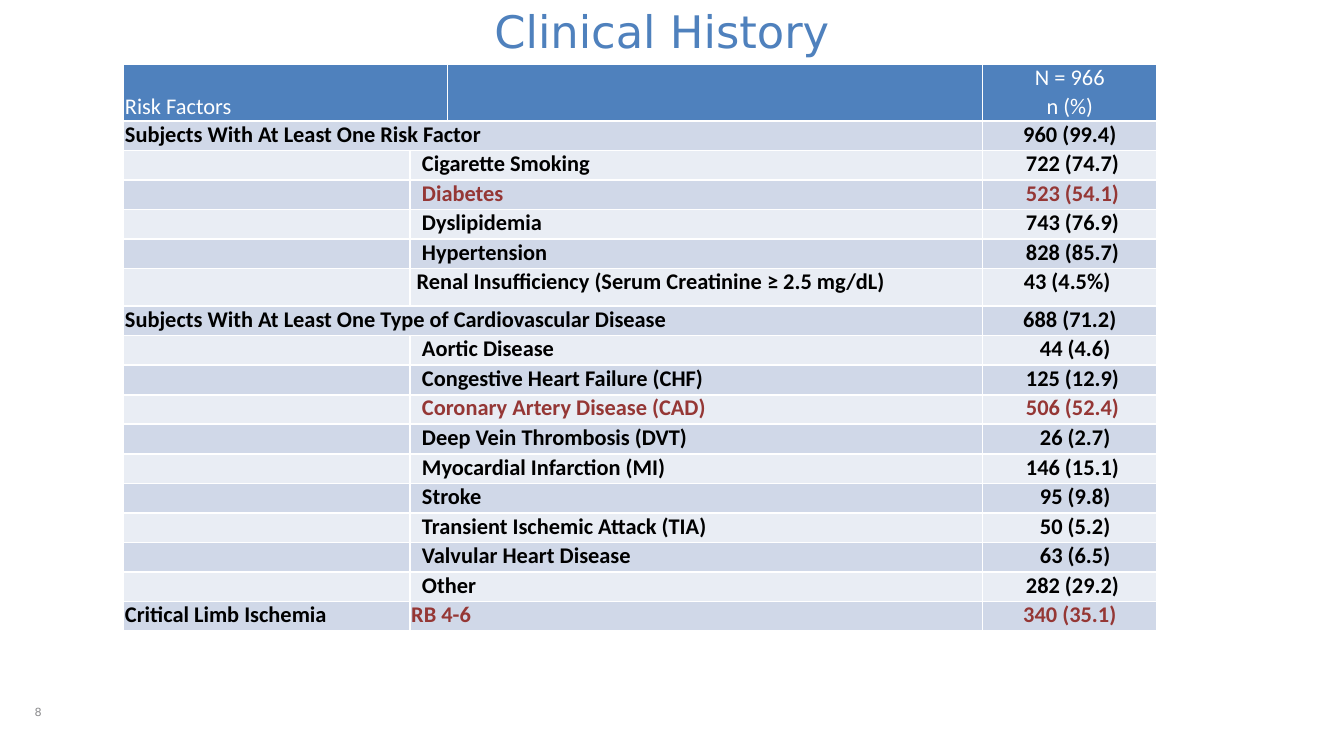
from collections import namedtuple

from lxml import etree
from pptx import Presentation
from pptx.dml.color import RGBColor
from pptx.enum.text import MSO_ANCHOR, PP_ALIGN
from pptx.oxml.ns import qn
from pptx.util import Inches, Pt

Theme = namedtuple("Theme", "blue white black red gray bands body title number table_font slide_font")
theme = Theme("4F81BD", "FFFFFF", "000000", "953735", "8C8C8E", ("D0D8E8", "E9EDF4"),
              12, 24, 6, "Calibri", "DejaVu Sans")


def write(paragraph, text, **font_values):
    color = font_values.pop("color")
    run = paragraph.add_run()
    run.text = text
    for name, value in font_values.items():
        setattr(run.font, name, value)
    run.font.color.rgb = RGBColor.from_string(color)


def add_border(cell, side):
    line = etree.SubElement(cell._tc.get_or_add_tcPr(), qn(f"a:ln{side}"), w=str(Pt(1)))
    fill = etree.SubElement(line, qn("a:solidFill"))
    etree.SubElement(fill, qn("a:srgbClr"), val=theme.white)


deck = Presentation()
deck.slide_width = Inches(10)
deck.slide_height = Inches(10) * 9 // 16
slide = deck.slides.add_slide(deck.slide_layouts[6])

captions = [
    ("Clinical History", (3.58, 0, 2.83, 0.48), theme.title, theme.blue, MSO_ANCHOR.BOTTOM, PP_ALIGN.LEFT),
    ("8", (0, 5.05, 0.57, 0.49), theme.number, theme.gray, MSO_ANCHOR.MIDDLE, PP_ALIGN.CENTER),
]
for text, bounds, size, color, anchor, alignment in captions:
    caption = slide.shapes.add_textbox(*map(Inches, bounds)).text_frame
    caption.word_wrap = True
    caption.vertical_anchor = anchor
    caption.paragraphs[0].alignment = alignment
    write(caption.paragraphs[0], text, size=Pt(size), name=theme.slide_font, color=color)

history = [
    ("Subjects With At Least One Risk Factor", "", "960 (99.4)"),
    ("", "Cigarette Smoking", "722 (74.7)"),
    ("", "Diabetes", "523 (54.1)"),
    ("", "Dyslipidemia", "743 (76.9)"),
    ("", "Hypertension", "828 (85.7)"),
    ("", "Renal Insufficiency (Serum Creatinine ≥ 2.5 mg/dL)", "43 (4.5%)"),
    ("Subjects With At Least One Type of Cardiovascular Disease", "", "688 (71.2)"),
    ("", "Aortic Disease", "44 (4.6)"),
    ("", "Congestive Heart Failure (CHF)", "125 (12.9)"),
    ("", "Coronary Artery Disease (CAD)", "506 (52.4)"),
    ("", "Deep Vein Thrombosis (DVT)", "26 (2.7)"),
    ("", "Myocardial Infarction (MI)", "146 (15.1)"),
    ("", "Stroke", "95 (9.8)"),
    ("", "Transient Ischemic Attack (TIA)", "50 (5.2)"),
    ("", "Valvular Heart Disease", "63 (6.5)"),
    ("", "Other", "282 (29.2)"),
    ("Critical Limb Ischemia", "RB 4-6", "340 (35.1)"),
]
rows = [("Risk Factors", "", "N = 966\nn (%)")] + history
highlighted = {"Diabetes", "Coronary Artery Disease (CAD)", "RB 4-6"}
renal_row = 6

table = slide.shapes.add_table(len(rows), 4, Inches(0.92), Inches(0.48), Inches(7.69), Inches(4.22)).table
for column, width in zip(table.columns, (2.13, 0.28, 3.98, 1.3)):
    column.width = Inches(width)

cell_format = {"margin_left": Inches(0.01), "margin_right": Inches(0.01),
               "margin_top": 0, "margin_bottom": 0}

for index, (group, factor, count) in enumerate(rows):
    is_header = index == 0
    table.rows[index].height = Inches({0: 0.42, renal_row: 0.28}.get(index, 0.22))
    first, last = (0, 1) if is_header else (1, 2) if factor else (0, 2)
    table.cell(index, first).merge(table.cell(index, last))
    row_fill = theme.blue if is_header else theme.bands[(index - 1) % 2]
    row_color = theme.white if is_header else theme.red if factor in highlighted else theme.black

    for position, text in enumerate((group, factor, "", count)):
        cell = table.cell(index, position)
        for name, value in cell_format.items():
            setattr(cell, name, value)
        cell.vertical_anchor = MSO_ANCHOR.BOTTOM if is_header and position == 0 else MSO_ANCHOR.TOP
        for side in "LRTB":
            add_border(cell, side)
        cell.fill.solid()
        cell.fill.fore_color.rgb = RGBColor.from_string(row_fill)

        for line_number, line in enumerate(text.split("\n")):
            paragraph = cell.text_frame.add_paragraph() if line_number else cell.text_frame.paragraphs[0]
            paragraph.space_after = Pt(0.5)
            if line_number:
                paragraph.space_before = Pt(0.5)
            if position == 3:
                paragraph.alignment = PP_ALIGN.CENTER
            if not line:
                etree.SubElement(paragraph._p, qn("a:endParaRPr"), sz=str(theme.body * 100))
                continue
            if not group and position in (1, 3):
                indent = 0.08 if position == 1 or len(count) == 8 else 0.04
                side = "marL"
                if index == renal_row:
                    indent = 0.04
                    side = "marR" if position == 3 else "marL"
                paragraph._p.get_or_add_pPr().set(side, str(Inches(indent)))
            color = theme.black if group and position == 0 and not is_header else row_color
            write(paragraph, line, size=Pt(theme.body), name=theme.table_font,
                  bold=not is_header, color=color)

deck.save("out.pptx")
